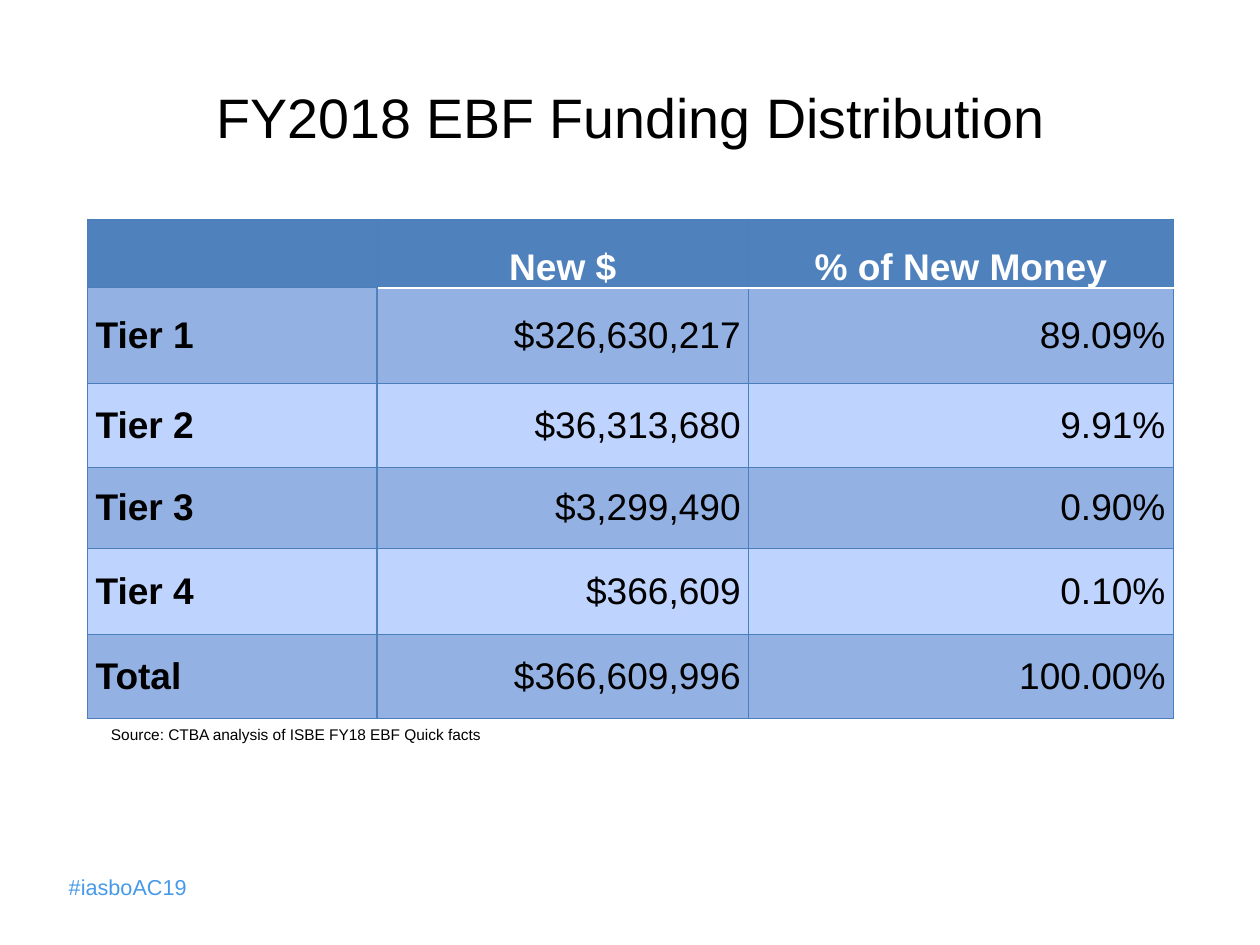
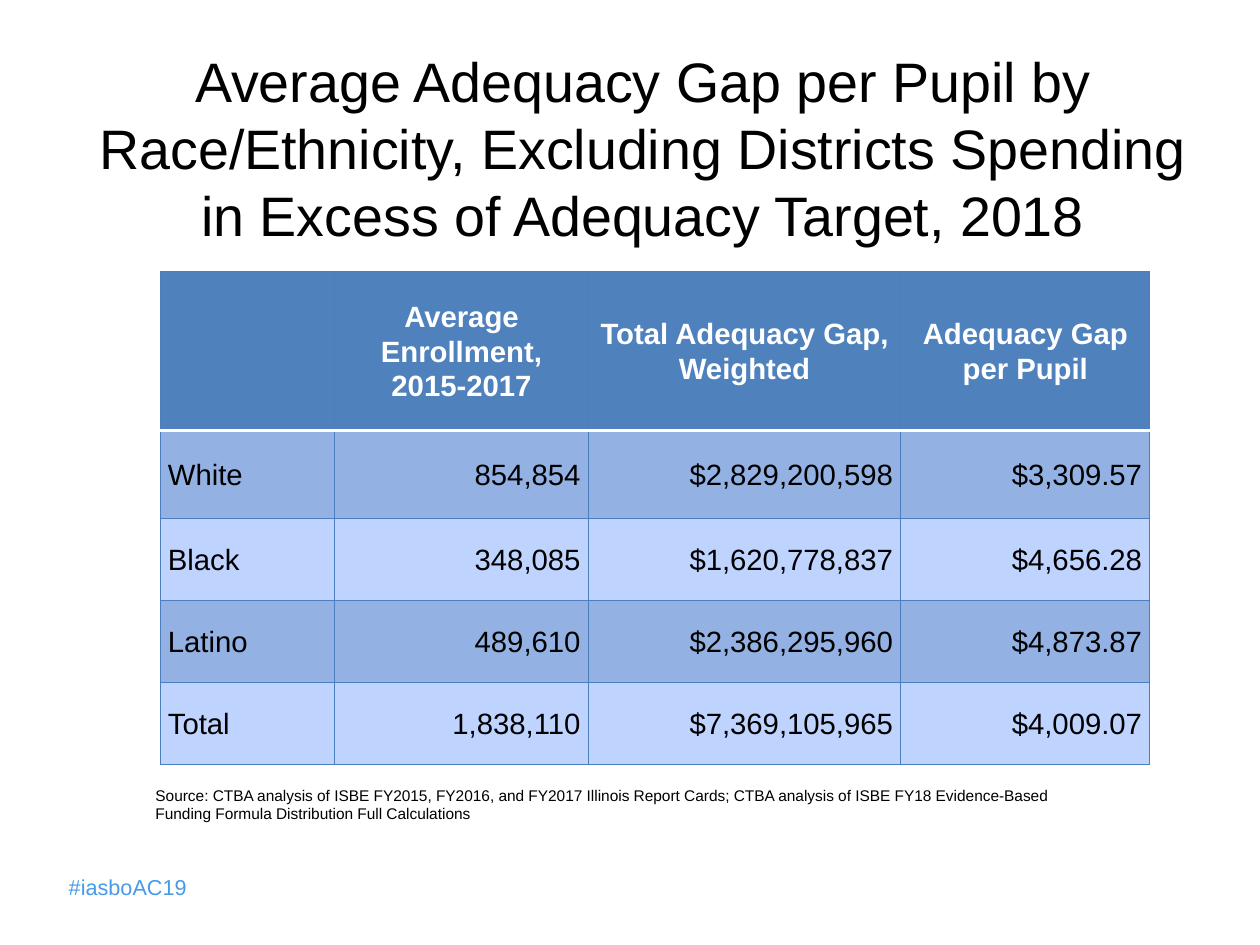
from lxml import etree
from pptx import Presentation
from pptx.dml import color
from pptx.enum import text
from pptx.oxml import ns
from pptx.util import Inches, Pt

FONT = "Arial"
BLACK, WHITE, HASHTAG = "000000", "FFFFFF", "479AE9"
HEADER, GRID, DARK_BAND, LIGHT_BAND = "4F81BD", "4B7EBC", "93B1E3", "BFD3FF"
THIN, THICK = (GRID, 0.75), (HEADER, 2)
HEADER_RULE = (WHITE, 2)
LEFT, CENTER, RIGHT = text.PP_ALIGN.LEFT, text.PP_ALIGN.CENTER, text.PP_ALIGN.RIGHT
MIDDLE, BOTTOM = text.MSO_ANCHOR.MIDDLE, text.MSO_ANCHOR.BOTTOM


def rgb(value):
    """Turn a hex string into a colour."""
    return color.RGBColor.from_string(value)


def write(frame, words, size, ink, align=LEFT, bold=False, spacing=None):
    """Fill a text frame with evenly formatted paragraphs."""
    frame.text = words
    frame.word_wrap = True
    for para in frame.paragraphs:
        para.alignment = align
        para.line_spacing = spacing
        para.font.name = FONT
        para.font.size = Pt(size)
        para.font.bold = bold
        para.font.color.rgb = rgb(ink)


def add_text(slide, place, words, size, ink, anchor=text.MSO_ANCHOR.TOP):
    """Add a text box and return it."""
    box = slide.shapes.add_textbox(*map(Inches, place))
    write(box.text_frame, words, size, ink)
    box.text_frame.vertical_anchor = anchor
    return box


def add_titled_slide(deck, place, words):
    """Add a title-only slide with a centred title."""
    slide = deck.slides.add_slide(deck.slide_layouts[5])
    title = slide.shapes.title
    title.left, title.top, title.width, title.height = map(Inches, place)
    frame = title.text_frame
    write(frame, words, 36, BLACK, CENTER)
    frame.vertical_anchor = MIDDLE
    frame.margin_left = frame.margin_right = Inches(0.11)
    frame.margin_top = frame.margin_bottom = Inches(0.06)
    return slide


def add_hashtag(slide):
    """Place the shared hashtag on the layout of the slide."""
    box = add_text(slide, (0.52, 7.81, 1.4, 0.34), "#iasboAC19", 14, HASHTAG)
    slide.slide_layout.shapes.element.append(box.element)


def set_borders(cell, **borders):
    """Draw cell borders, each given as a colour and a width."""
    properties = cell._tc.get_or_add_tcPr()
    for side in ("L", "R", "T", "B"):
        ink, width = borders[side]
        line = etree.SubElement(properties, ns.qn(f"a:ln{side}"), w=str(Pt(width)))
        fill = etree.SubElement(line, ns.qn("a:solidFill"))
        etree.SubElement(fill, ns.qn("a:srgbClr"), val=ink)


def borders_at(row, column, labelled):
    """Work out the four borders of a cell."""
    def below(line):
        return THIN if line or (labelled and column == 0) else HEADER_RULE

    def beside(line):
        return THICK if labelled and row and line == 1 else THIN

    return {
        "L": beside(column),
        "R": beside(column + 1),
        "T": below(row - 1) if row else THIN,
        "B": below(row),
    }


def add_grid(slide, corner, widths, heights, rows, size,
             header_anchor=MIDDLE, labelled=False, spacing=None):
    """Add a banded table; labelled marks a bold first column."""
    place = (*corner, sum(widths), sum(heights))
    table = slide.shapes.add_table(
        len(rows), len(widths), *map(Inches, place)).table
    for column, width in zip(table.columns, widths):
        column.width = Inches(width)
    for band, height in zip(table.rows, heights):
        band.height = Inches(height)
    for row, values in enumerate(rows):
        for column, value in enumerate(values):
            cell = table.cell(row, column)
            header = row == 0
            align = CENTER if header else RIGHT if column else LEFT
            bold = header or (labelled and column == 0)
            write(cell.text_frame, value, size, WHITE if header else BLACK,
                  align, bold, spacing)
            cell.vertical_anchor = header_anchor if header else MIDDLE
            cell.margin_left = cell.margin_right = Inches(0.07)
            cell.margin_top = cell.margin_bottom = 0
            set_borders(cell, **borders_at(row, column, labelled))
            cell.fill.solid()
            band = DARK_BAND if row % 2 else LIGHT_BAND
            cell.fill.fore_color.rgb = rgb(HEADER if header else band)


def add_distribution(deck):
    """Build the funding distribution slide."""
    slide = add_titled_slide(
        deck, (0.57, 0.34, 10.2, 1.42), "FY2018 EBF Funding Distribution")
    rows = [
        ("", "New $", "% of New Money"),
        ("Tier 1", "$326,630,217", "89.09%"),
        ("Tier 2", "$36,313,680", "9.91%"),
        ("Tier 3", "$3,299,490", "0.90%"),
        ("Tier 4", "$366,609", "0.10%"),
        ("Total", "$366,609,996", "100.00%"),
    ]
    add_grid(slide, (0.79, 1.97), (2.6, 3.34, 3.82),
             (0.62, 0.86, 0.76, 0.72, 0.78, 0.75), rows, 24, BOTTOM, True)
    add_text(slide, (0.9, 6.47, 3.73, 0.27),
             "Source: CTBA analysis of ISBE FY18 EBF Quick facts",
             10, BLACK, MIDDLE)
    return slide


def add_adequacy_gap(deck):
    """Build the adequacy gap slide."""
    slide = add_titled_slide(
        deck, (0.61, 0.52, 10.34, 1.61),
        "Average Adequacy Gap per Pupil by Race/Ethnicity, Excluding "
        "Districts Spending in Excess of Adequacy Target, 2018")
    rows = [
        ("", "Average Enrollment,\n2015-2017", "Total Adequacy Gap, Weighted",
         "Adequacy Gap per Pupil"),
        ("White", "854,854", "$2,829,200,598", "$3,309.57"),
        ("Black", "348,085", "$1,620,778,837", "$4,656.28"),
        ("Latino", "489,610", "$2,386,295,960", "$4,873.87"),
        ("Total", "1,838,110", "$7,369,105,965", "$4,009.07"),
    ]
    add_grid(slide, (1.44, 2.44), (1.57, 2.28, 2.81, 2.24),
             (1.43, 0.79, 0.74, 0.74, 0.74), rows, 19, spacing=1.07)
    add_text(slide, (1.3, 7.02, 8.73, 0.44),
             "Source: CTBA analysis of ISBE FY2015, FY2016, and FY2017 "
             "Illinois Report Cards; CTBA analysis of ISBE FY18 "
             "Evidence-Based Funding Formula Distribution Full Calculations",
             10, BLACK)


def main():
    """Build and save the deck."""
    deck = Presentation()
    deck.slide_width, deck.slide_height = Inches(11.33), Inches(8.5)
    add_hashtag(add_distribution(deck))
    add_adequacy_gap(deck)
    deck.save("out.pptx")


if __name__ == "__main__":
    main()
